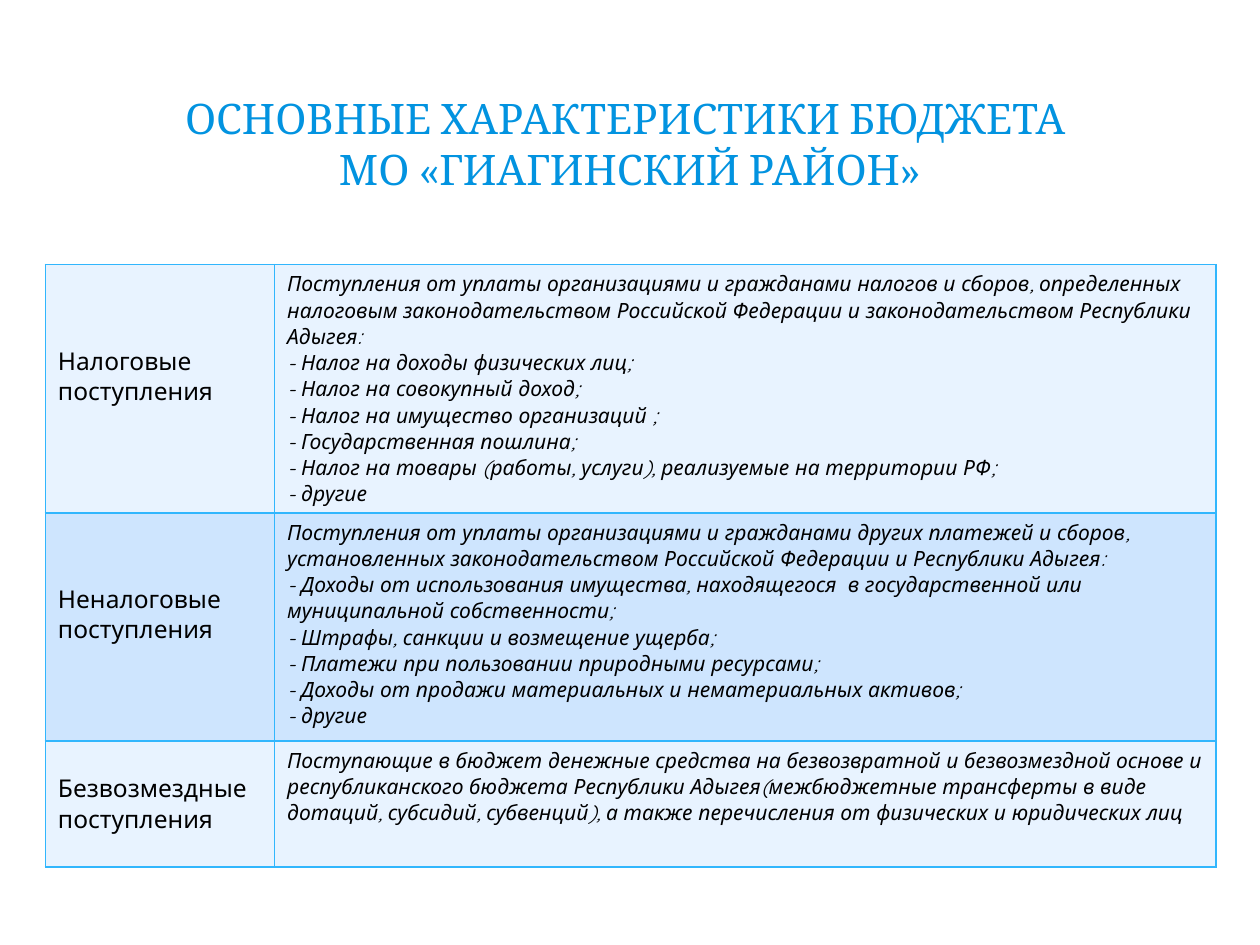
import pptx
import pptx.dml.color
import pptx.enum.shapes
import pptx.enum.text
import pptx.oxml
import pptx.oxml.ns
import pptx.util
from pptx.util import Inches

RGBColor = pptx.dml.color.RGBColor
MSO_SHAPE = pptx.enum.shapes.MSO_SHAPE
MIDDLE = pptx.enum.text.MSO_ANCHOR.MIDDLE
TOP = pptx.enum.text.MSO_ANCHOR.TOP

WHITE = RGBColor(0xFF, 0xFF, 0xFF)
TITLE_BLUE = RGBColor(0x02, 0x93, 0xE0)
BORDER_BLUE = RGBColor(0x31, 0xB6, 0xFD)
BLACK = RGBColor(0x00, 0x00, 0x00)
BANDS = [RGBColor(0xE8, 0xF3, 0xFF), RGBColor(0xCE, 0xE5, 0xFE)]

# Background panels: preset, left, top, width, height, opacity in percent
PANELS = [
    (MSO_SHAPE.ROUNDED_RECTANGLE, 0.1, 0.11, 9.8, 7.29, 100),
    (MSO_SHAPE.RECTANGLE, 0.3, 0.3, 9.4, 1.45, 83),
    (MSO_SHAPE.RECTANGLE, 0.41, 0.41, 9.17, 1.22, 100),
]

# Content: revenue type, its bottom margin, description, list of sources
TITLE = "ОСНОВНЫЕ ХАРАКТЕРИСТИКИ БЮДЖЕТА \vМО «ГИАГИНСКИЙ РАЙОН»"
REVENUES = [
    ("Налоговые поступления", 0.25,
     "Поступления от уплаты организациями и гражданами налогов и сборов, "
     "определенных налоговым законодательством Российской Федерации и "
     "законодательством Республики Адыгея:",
     ["Налог на доходы физических лиц;",
      "Налог на совокупный доход;",
      "Налог на имущество организаций ;",
      "Государственная пошлина;",
      "Налог на товары (работы, услуги), реализуемые на территории РФ;",
      "другие"]),
    ("Неналоговые поступления", 0.25,
     "Поступления от уплаты организациями и гражданами других платежей и сборов, "
     "установленных законодательством Российской Федерации и Республики Адыгея:",
     ["Доходы от использования имущества, находящегося  в государственной или "
      "муниципальной собственности;",
      "Штрафы, санкции и возмещение ущерба;",
      "Платежи при пользовании природными ресурсами;",
      "Доходы от продажи материальных и нематериальных активов;",
      "другие"]),
    ("Безвозмездные поступления", 0.05,
     "Поступающие в бюджет денежные средства на безвозвратной и безвозмездной "
     "основе и республиканского бюджета Республики Адыгея(межбюджетные трансферты "
     "в виде дотаций, субсидий, субвенций), а также перечисления от физических и "
     "юридических лиц",
     []),
]
COLUMN_WIDTHS = [1.82, 7.47]
ROW_HEIGHTS = [1.97, 1.81, 1]


def add_panel(slide, preset, left, top, width, height, opacity):
    panel = slide.shapes.add_shape(
        preset, Inches(left), Inches(top), Inches(width), Inches(height))
    panel.shadow.inherit = False
    panel.line.fill.background()
    panel.fill.solid()
    panel.fill.fore_color.rgb = WHITE
    if preset == MSO_SHAPE.ROUNDED_RECTANGLE:
        panel.adjustments[0] = 0.02
    if opacity < 100:
        color = panel.fill._xPr.find(".//" + pptx.oxml.ns.qn("a:srgbClr"))
        color.append(pptx.oxml.parse_xml(
            f'<a:alpha {pptx.oxml.ns.nsdecls("a")} val="{opacity * 1000}"/>'))


def format_text(text_frame, font_name, size, color, italic=False):
    for paragraph in text_frame.paragraphs:
        for run in paragraph.runs:
            run.font.name = font_name
            run.font.size = pptx.util.Pt(size)
            run.font.color.rgb = color
            run.font.italic = italic


def add_borders(cell):
    # Border lines must come before the fill in the cell properties
    properties = cell._tc.get_or_add_tcPr()
    for index, side in enumerate(("lnL", "lnR", "lnT", "lnB")):
        properties.insert(index, pptx.oxml.parse_xml(
            f'<a:{side} {pptx.oxml.ns.nsdecls("a")} w="12700"><a:solidFill>'
            f'<a:srgbClr val="{BORDER_BLUE}"/></a:solidFill></a:{side}>'))


def fill_cell(cell, text, size, anchor, band, italic=False):
    cell.text_frame.text = text
    format_text(cell.text_frame, "Quicksand", size, BLACK, italic)
    cell.vertical_anchor = anchor
    cell.fill.solid()
    cell.fill.fore_color.rgb = band
    add_borders(cell)


presentation = pptx.Presentation()
presentation.slide_width = Inches(10)
presentation.slide_height = Inches(7.5)
slide = presentation.slides.add_slide(presentation.slide_layouts[6])

# Background panels
for panel in PANELS:
    add_panel(slide, *panel)

# Title
title = slide.shapes.add_textbox(Inches(0.75), Inches(0.44), Inches(8.5), Inches(1.39))
title.text_frame.word_wrap = True
title.text_frame.vertical_anchor = MIDDLE
title.text_frame.text = TITLE
title.text_frame.paragraphs[0].alignment = pptx.enum.text.PP_ALIGN.CENTER
format_text(title.text_frame, "Cambria", 24, TITLE_BLUE)

# Revenue table
table = slide.shapes.add_table(
    len(REVENUES), len(COLUMN_WIDTHS), Inches(0.36), Inches(2.1),
    Inches(sum(COLUMN_WIDTHS)), Inches(sum(ROW_HEIGHTS))).table
table.first_row = False
for column, width in zip(table.columns, COLUMN_WIDTHS):
    column.width = Inches(width)
for row, height in zip(table.rows, ROW_HEIGHTS):
    row.height = Inches(height)

for index, (name, bottom_margin, description, sources) in enumerate(REVENUES):
    band = BANDS[index % len(BANDS)]
    details = "\n".join([description] + [f"- {source}" for source in sources])
    name_cell = table.cell(index, 0)
    fill_cell(name_cell, name, 14, MIDDLE, band)
    name_cell.margin_bottom = Inches(bottom_margin)
    fill_cell(table.cell(index, 1), details, 12, TOP, band, italic=True)

presentation.save("out.pptx")
